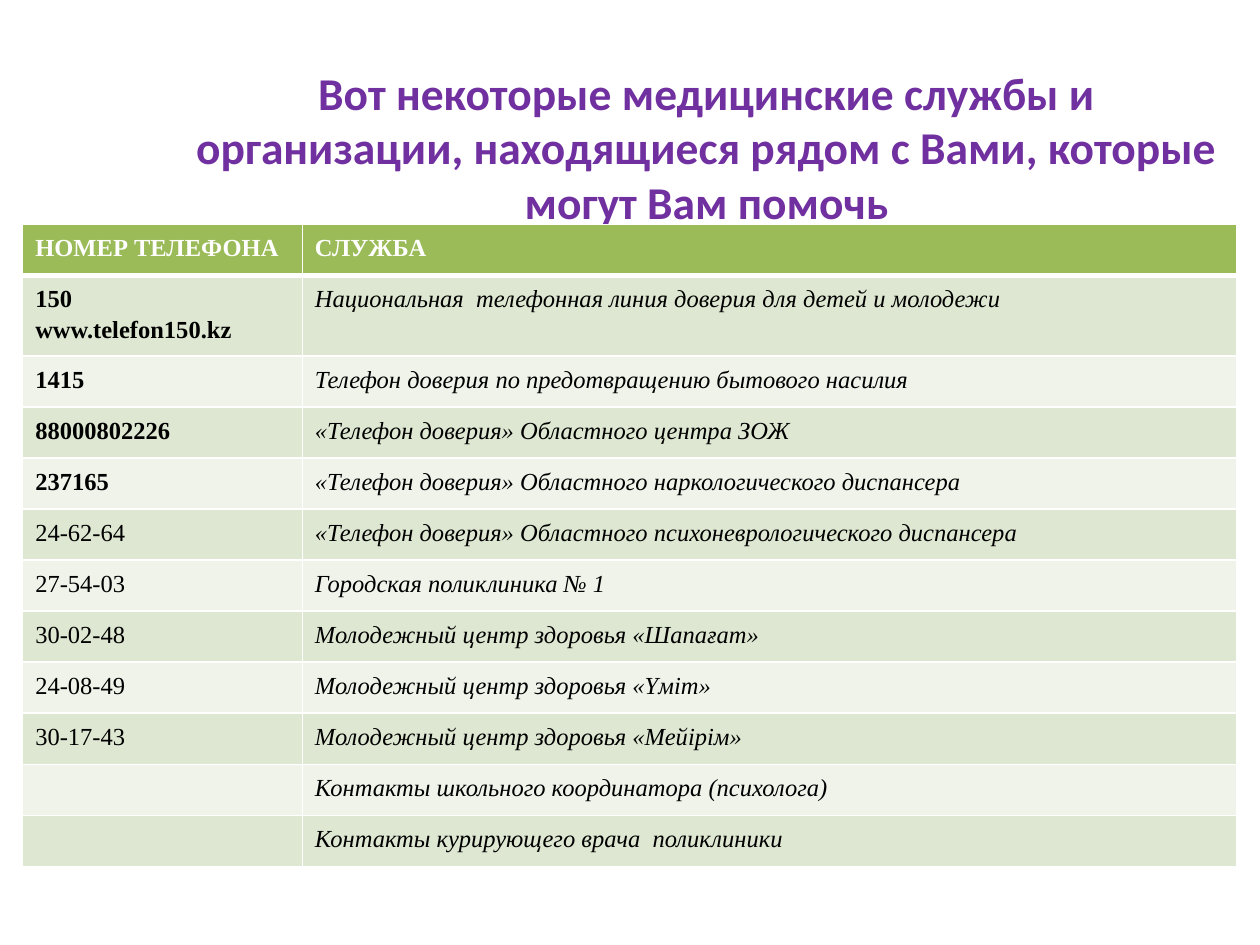
from lxml import etree
from pptx import Presentation
from pptx.dml.color import RGBColor
from pptx.enum import text
from pptx.oxml.ns import qn
from pptx.util import Inches, Pt

# Content
TITLE = ("Вот некоторые медицинские службы и организации, "
         "находящиеся рядом с Вами, которые могут Вам помочь")
ROWS = [
    ("НОМЕР ТЕЛЕФОНА", "СЛУЖБА"),
    ("150\nwww.telefon150.kz",
     "Национальная  телефонная линия доверия для детей и молодежи"),
    ("1415", "Телефон доверия по предотвращению бытового насилия"),
    ("88000802226", "«Телефон доверия» Областного центра ЗОЖ"),
    ("237165", "«Телефон доверия» Областного наркологического диспансера"),
    ("24-62-64", "«Телефон доверия» Областного психоневрологического диспансера"),
    ("27-54-03", "Городская поликлиника № 1"),
    ("30-02-48", "Молодежный центр здоровья «Шапағат»"),
    ("24-08-49", "Молодежный центр здоровья «Үміт»"),
    ("30-17-43", "Молодежный центр здоровья «Мейірім»"),
    ("", "Контакты школьного координатора (психолога)"),
    ("", "Контакты курирующего врача  поликлиники"),
]
BOLD_ROWS = 5  # header and the hotlines

THEME = {
    "title": ("Calibri", 26, "7030A0"),
    "head": ("Times New Roman", 14, "FFFFFF"),
    "body": ("Times New Roman", 14, "000000"),
    "fill": "9BBB59",
    "bands": ("EFF3EA", "DEE7D1"),
    "line": "FFFFFF",
}

# Layout
LEFT, TOP, HIGH = 0.18, 1.78, 5.1
COLS = (2.22, 7.42)
TALL = 0.64  # the two-line row


def style(para, role, bold, italic=False):
    name, size, color = THEME[role]
    for run in para.runs:
        font = run.font
        font.name, font.size = name, Pt(size)
        font.bold, font.italic = bold, italic
        font.color.rgb = RGBColor.from_string(color)


def border(cell, head):
    props = cell._tc.get_or_add_tcPr()
    for side in "LRTB":
        wide = 3 if head and side == "B" else 1
        line = etree.SubElement(props, qn(f"a:ln{side}"), w=str(Pt(wide)))
        fill = etree.SubElement(line, qn("a:solidFill"))
        etree.SubElement(fill, qn("a:srgbClr"), val=THEME["line"])


def add_title(slide):
    box = slide.shapes.title
    box.left, box.top = Inches(1.38), Inches(0.6)
    box.width, box.height = Inches(8.46), Inches(1.13)
    frame = box.text_frame
    frame.text = TITLE
    frame.word_wrap = True
    frame.auto_size = text.MSO_AUTO_SIZE.NONE
    frame.vertical_anchor = text.MSO_ANCHOR.MIDDLE
    frame.paragraphs[0].alignment = text.PP_ALIGN.CENTER
    style(frame.paragraphs[0], "title", True)


def add_phones(slide):
    table = slide.shapes.add_table(
        len(ROWS), len(COLS), Inches(LEFT), Inches(TOP),
        Inches(sum(COLS)), Inches(HIGH)).table
    for col, wide in zip(table.columns, COLS):
        col.width = Inches(wide)
    short = (HIGH - TALL) / (len(ROWS) - 1)
    for r, row in enumerate(ROWS):
        head = r == 0
        table.rows[r].height = Inches(TALL if "\n" in row[0] else short)
        for c, words in enumerate(row):
            cell = table.cell(r, c)
            border(cell, head)
            cell.fill.solid()
            shade = THEME["fill"] if head else THEME["bands"][r % 2]
            cell.fill.fore_color.rgb = RGBColor.from_string(shade)
            cell.text_frame.text = words
            for para in cell.text_frame.paragraphs:
                para.alignment = text.PP_ALIGN.JUSTIFY
                para.line_spacing = 1.15
                style(para, "head" if head else "body",
                      head or (c == 0 and r < BOLD_ROWS),
                      c == 1 and not head)


def main():
    deck = Presentation()
    deck.slide_width, deck.slide_height = Inches(10), Inches(7.5)
    slide = deck.slides.add_slide(deck.slide_layouts[5])  # title only
    add_title(slide)
    add_phones(slide)
    deck.save("out.pptx")


if __name__ == "__main__":
    main()
